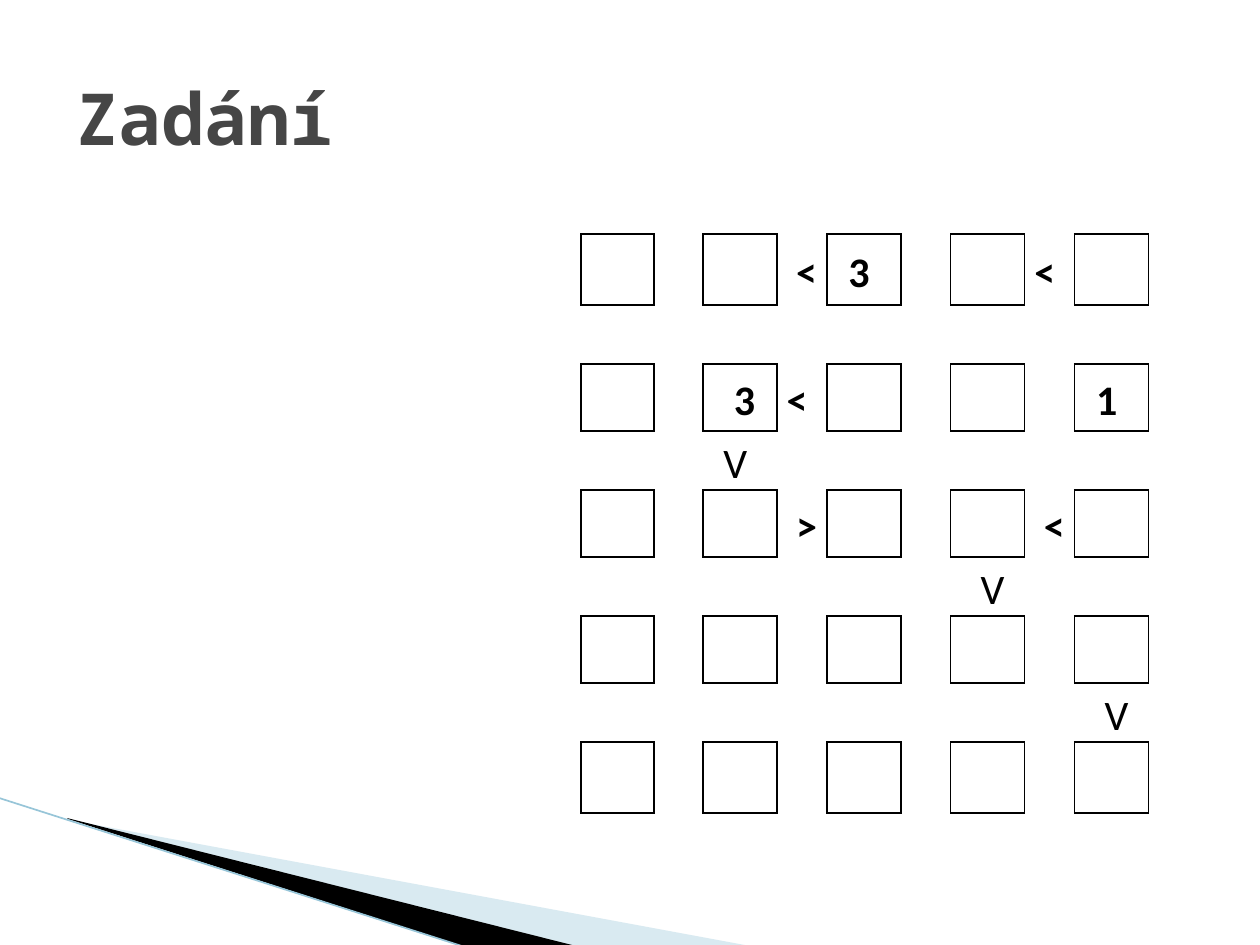
from dataclasses import dataclass

from lxml import etree
from pptx import Presentation
from pptx.dml.color import RGBColor
from pptx.enum.shapes import MSO_CONNECTOR
from pptx.enum.text import MSO_ANCHOR, PP_ALIGN
from pptx.oxml.ns import qn
from pptx.util import Emu, Pt

STRAIGHT = MSO_CONNECTOR.STRAIGHT
MIDDLE = MSO_ANCHOR.MIDDLE
CENTER = PP_ALIGN.CENTER

PX_PER_INCH = 126
EMU_PER_PX = 914400 / PX_PER_INCH
COLORS = {"black": "000000", "wedge": "A0CBDC", "edge": "97C5D8", "title": "464646"}


@dataclass(frozen=True)
class Wedge:
    points: tuple[tuple[int, int], ...]
    color: str
    opacity: int = 100


@dataclass(frozen=True)
class Mark:
    row: int
    column: int
    text: str
    bold: bool = True


WEDGES = (
    Wedge(((69, 820), (750, 946), (575, 946), (69, 819)), "wedge", 40),
    Wedge(((67, 818), (576, 946), (469, 948), (68, 819)), "black"),
)

# Even rows and columns hold the boxes, odd ones are the gaps between them
COLUMN_WIDTHS = (73, 49, 74, 50, 74, 50, 74, 50, 74)
ROW_HEIGHTS = (71, 59, 67, 59, 67, 59, 67, 59, 71)
MARKS = (
    Mark(0, 3, " <"),
    Mark(0, 4, "3 "),
    Mark(0, 7, "< "),
    Mark(2, 2, " 3"),
    Mark(2, 3, "< "),
    Mark(2, 8, "1 "),
    Mark(3, 2, "V ", False),
    Mark(4, 3, " >"),
    Mark(4, 7, " <"),
    Mark(5, 6, " V", False),
    Mark(7, 8, " V", False),
)


def px(length: int) -> Emu:
    return Emu(round(length * EMU_PER_PX))


def rgb(name: str) -> RGBColor:
    return RGBColor.from_string(COLORS[name])


def draw_wedge(slide, wedge: Wedge) -> None:
    builder = slide.shapes.build_freeform(*wedge.points[0], scale=EMU_PER_PX)
    builder.add_line_segments(wedge.points[1:], close=True)
    shape = builder.convert_to_shape()
    shape.shadow.inherit = False
    shape.fill.solid()
    shape.fill.fore_color.rgb = rgb(wedge.color)
    shape.line.fill.background()
    if wedge.opacity < 100:
        color = shape._element.spPr.find(qn("a:solidFill"))[0]
        etree.SubElement(color, qn("a:alpha"), val=str(wedge.opacity * 1000))


def draw_edge(slide) -> None:
    edge = slide.shapes.add_connector(STRAIGHT, px(-1), px(798), px(468), px(948))
    edge.line.color.rgb = rgb("edge")
    edge.line.width = Pt(0.95)
    etree.SubElement(edge._element.spPr, qn("a:effectLst"))


def draw_title(slide, text: str) -> None:
    box = slide.shapes.add_textbox(px(63), px(38), px(1134), px(158))
    frame = box.text_frame
    frame.word_wrap = True
    frame.vertical_anchor = MIDDLE
    frame.text = text
    font = frame.paragraphs[0].runs[0].font
    font.name = "Noto Sans Mono"
    font.size = Pt(41)
    font.bold = True
    font.color.rgb = rgb("title")


def set_border(cell, side: str, visible: bool) -> None:
    properties = cell._tc.get_or_add_tcPr()
    line = etree.SubElement(properties, qn(f"a:ln{side}"), w=str(Pt(1)))
    if visible:
        fill = etree.SubElement(line, qn("a:solidFill"))
        etree.SubElement(fill, qn("a:srgbClr"), val=COLORS["black"])
    else:
        etree.SubElement(line, qn("a:noFill"))


def format_cell(cell, row: int, column: int) -> None:
    for side in "LRTB":
        index = row if side in "LR" else column
        set_border(cell, side, index % 2 == 0)
    cell.fill.background()
    cell.margin_left = cell.margin_right = px(9)
    cell.margin_top = cell.margin_bottom = 0
    cell.vertical_anchor = MIDDLE


def write_mark(cell, mark: Mark) -> None:
    cell.text_frame.text = mark.text
    paragraph = cell.text_frame.paragraphs[0]
    paragraph.alignment = CENTER
    paragraph.line_spacing = 1.15
    font = paragraph.runs[0].font
    font.name = "Calibri"
    font.size = Pt(24)
    font.bold = mark.bold
    font.color.rgb = rgb("black")


def draw_puzzle(slide) -> None:
    frame = slide.shapes.add_table(
        len(ROW_HEIGHTS), len(COLUMN_WIDTHS), px(581), px(234),
        px(sum(COLUMN_WIDTHS)), px(sum(ROW_HEIGHTS)),
    )
    table = frame.table
    table.first_row = False
    table.horz_banding = False
    for column, width in zip(table.columns, COLUMN_WIDTHS):
        column.width = px(width)
    for row, height in zip(table.rows, ROW_HEIGHTS):
        row.height = px(height)
    for row in range(len(ROW_HEIGHTS)):
        for column in range(len(COLUMN_WIDTHS)):
            format_cell(table.cell(row, column), row, column)
    for mark in MARKS:
        write_mark(table.cell(mark.row, mark.column), mark)


def main() -> None:
    presentation = Presentation()
    presentation.slide_width = px(1260)
    presentation.slide_height = px(945)
    slide = presentation.slides.add_slide(presentation.slide_layouts[6])

    # Corner decoration
    for wedge in WEDGES:
        draw_wedge(slide, wedge)
    draw_edge(slide)

    # Title and puzzle grid
    draw_title(slide, "Zadání")
    draw_puzzle(slide)

    presentation.save("out.pptx")


if __name__ == "__main__":
    main()
